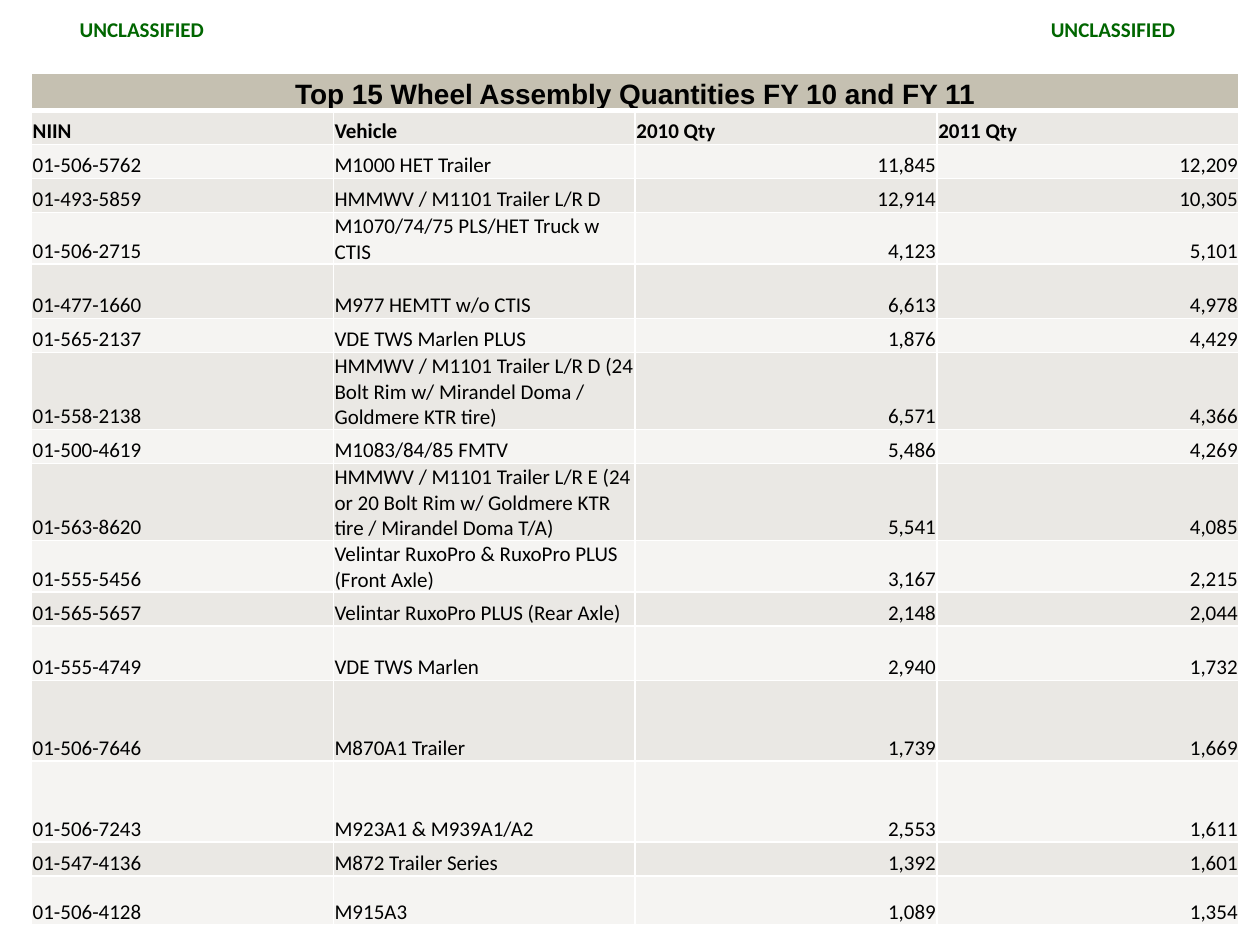
"""Build the wheel assembly quantities slide."""
from lxml import etree
from pptx import Presentation
from pptx import util as u
from pptx.dml.color import RGBColor
from pptx.enum import text
from pptx.oxml import ns

BLACK = RGBColor(0x00, 0x00, 0x00)
WHITE = RGBColor(0xFF, 0xFF, 0xFF)
GREEN = RGBColor(0x00, 0x66, 0x00)
TITLE_FILL = RGBColor(0xC5, 0xC0, 0xB1)
DARK_BAND = RGBColor(0xEA, 0xE8, 0xE4)
LIGHT_BAND = RGBColor(0xF5, 0xF4, 0xF2)

LEFT, CENTER, RIGHT = text.PP_ALIGN.LEFT, text.PP_ALIGN.CENTER, text.PP_ALIGN.RIGHT
ALIGNMENTS = (LEFT, LEFT, RIGHT, RIGHT)

TITLE = "Top 15 Wheel Assembly Quantities FY 10 and FY 11"
HEADINGS = ("NIIN", "Vehicle", "2010 Qty", "2011 Qty")
TITLE_HEIGHT = 21
LINE_HEIGHT = 19.5
ASSEMBLIES = (
    ("01-506-5762", "M1000 HET Trailer", "11,845", "12,209", LINE_HEIGHT),
    ("01-493-5859", "HMMWV / M1101 Trailer L/R D", "12,914", "10,305", LINE_HEIGHT),
    ("01-506-2715", "M1070/74/75 PLS/HET Truck w CTIS", "4,123", "5,101", 28),
    ("01-477-1660", "M977 HEMTT w/o CTIS", "6,613", "4,978", 31),
    ("01-565-2137", "VDE TWS Marlen PLUS", "1,876", "4,429", LINE_HEIGHT),
    ("01-558-2138", "HMMWV / M1101 Trailer L/R D (24 Bolt Rim w/ Mirandel Doma / "
     "Goldmere KTR tire)", "6,571", "4,366", 42),
    ("01-500-4619", "M1083/84/85 FMTV", "5,486", "4,269", LINE_HEIGHT),
    ("01-563-8620", "HMMWV / M1101 Trailer L/R E (24 or 20 Bolt Rim w/ Goldmere KTR "
     "tire / Mirandel Doma T/A)", "5,541", "4,085", 42),
    ("01-555-5456", "Velintar RuxoPro & RuxoPro PLUS (Front Axle)", "3,167", "2,215", 28),
    ("01-565-5657", "Velintar RuxoPro PLUS (Rear Axle)", "2,148", "2,044", LINE_HEIGHT),
    ("01-555-4749", "VDE TWS Marlen", "2,940", "1,732", 31),
    ("01-506-7646", "M870A1 Trailer", "1,739", "1,669", 46.2),
    ("01-506-7243", "M923A1 & M939A1/A2", "2,553", "1,611", 46.2),
    ("01-547-4136", "M872 Trailer Series", "1,392", "1,601", LINE_HEIGHT),
    ("01-506-4128", "M915A3", "1,089", "1,354", 28),
)


def write_text(frame, content, font="Calibri", size=12, color=BLACK, bold=False, align=LEFT):
    """Write one formatted paragraph into a text frame."""
    paragraph = frame.paragraphs[0]
    paragraph.alignment = align
    run = paragraph.add_run()
    run.text = content
    run.font.name = font
    run.font.size = u.Pt(size)
    run.font.bold = bold
    run.font.color.rgb = color


class SlideBuilder:
    """Hold the table style and the current slide."""

    inset = 0.72
    border = 1
    title_border = 3

    def __init__(self, slide):
        """Keep the slide that receives the elements."""
        self.slide = slide

    def marking(self, content, left, width):
        """Add a classification marking at the top of the slide."""
        shape = self.slide.shapes.add_textbox(u.Pt(left), u.Pt(6), u.Pt(width), u.Pt(21.8))
        frame = shape.text_frame
        frame.word_wrap = True
        frame.vertical_anchor = text.MSO_ANCHOR.MIDDLE
        write_text(frame, content, color=GREEN, bold=True, align=CENTER)

    def table(self, left, top, column_width, heights):
        """Add an unstyled table with equal columns and the given row heights."""
        count = len(HEADINGS)
        shape = self.slide.shapes.add_table(
            len(heights), count, u.Pt(left), u.Pt(top),
            u.Pt(column_width * count), u.Pt(sum(heights)))
        table = shape.table
        table.first_row = table.horz_banding = False
        for column in table.columns:
            column.width = u.Pt(column_width)
        for row, height in zip(table.rows, heights):
            row.height = u.Pt(height)
        return table

    def borders(self, cell, top, bottom):
        """Draw white borders around a cell."""
        properties = cell._tc.get_or_add_tcPr()
        widths = {"lnL": self.border, "lnR": self.border, "lnT": top, "lnB": bottom}
        for tag, width in widths.items():
            line = etree.SubElement(properties, ns.qn(f"a:{tag}"), w=str(u.Pt(width)))
            fill = etree.SubElement(line, ns.qn("a:solidFill"))
            etree.SubElement(fill, ns.qn("a:srgbClr"), val=str(WHITE))

    def cell(self, cell, fill, content="", top=border, bottom=border, **style):
        """Format a table cell and write its text."""
        self.borders(cell, top, bottom)
        cell.fill.solid()
        cell.fill.fore_color.rgb = fill
        cell.margin_left = cell.margin_right = cell.margin_top = u.Pt(self.inset)
        cell.margin_bottom = 0
        cell.vertical_anchor = text.MSO_ANCHOR.BOTTOM
        if content:
            write_text(cell.text_frame, content, **style)

    def quantities(self):
        """Add the table of wheel assembly quantities."""
        heights = [TITLE_HEIGHT, LINE_HEIGHT] + [assembly[-1] for assembly in ASSEMBLIES]
        table = self.table(18, 42, 172.5, heights)
        heavy = self.title_border
        table.cell(0, 0).merge(table.cell(0, len(HEADINGS) - 1))
        for column, heading in enumerate(HEADINGS):
            self.cell(table.cell(0, column), TITLE_FILL, "" if column else TITLE,
                      bottom=heavy, font="Arial", size=16, bold=True, align=CENTER)
            self.cell(table.cell(1, column), DARK_BAND, heading, top=heavy, bold=True)
        for row, (*values, _) in enumerate(ASSEMBLIES, start=2):
            fill = DARK_BAND if row % 2 else LIGHT_BAND
            for column, (value, align) in enumerate(zip(values, ALIGNMENTS)):
                self.cell(table.cell(row, column), fill, value, align=align)


def main():
    """Create and save the presentation."""
    presentation = Presentation()
    presentation.slide_width, presentation.slide_height = u.Pt(720), u.Pt(540)
    builder = SlideBuilder(presentation.slides.add_slide(presentation.slide_layouts[6]))
    builder.marking("UNCLASSIFIED", 576, 120)
    builder.marking("UNCLASSIFIED", 18, 126)
    builder.quantities()
    presentation.save("out.pptx")


if __name__ == "__main__":
    main()
